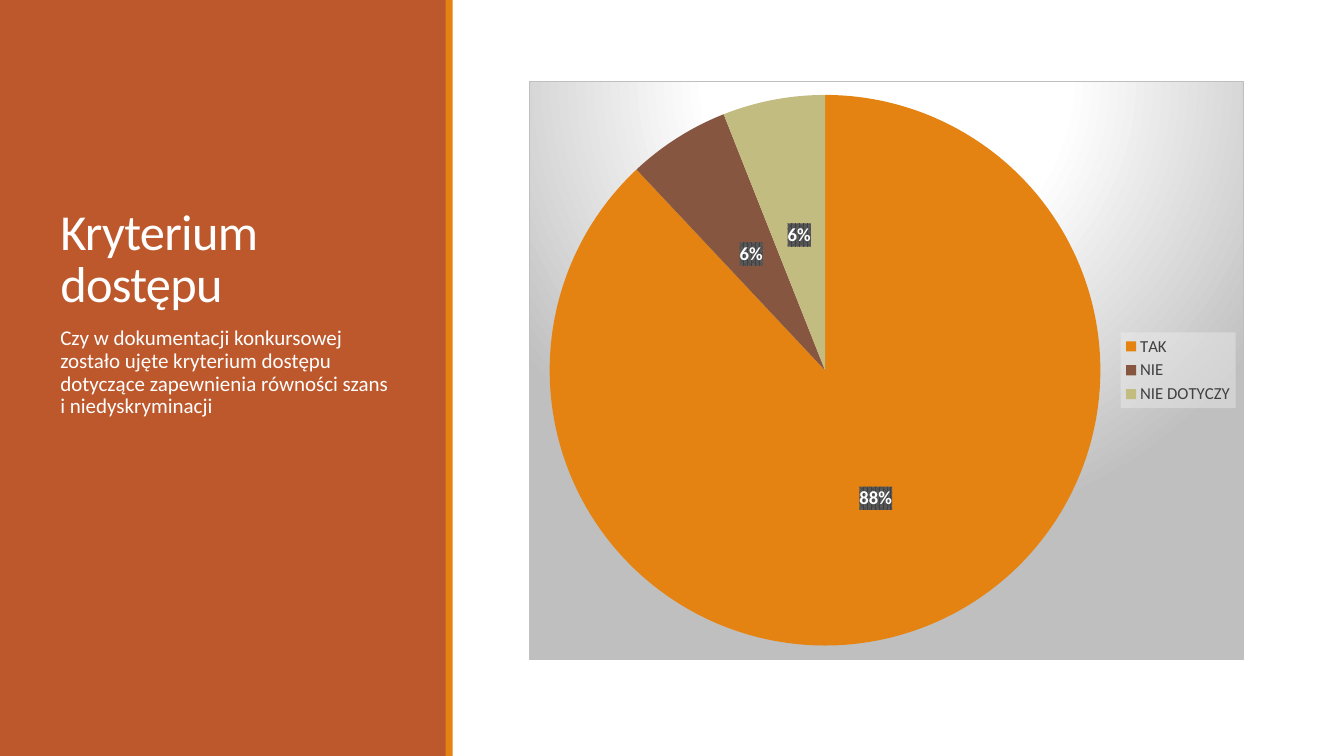
"""Build a slide with a title panel and a pie chart of the access criterion answers."""
from lxml.etree import fromstring
from pptx import Presentation
from pptx.chart.data import CategoryChartData
from pptx.dml.color import RGBColor
from pptx.enum.chart import XL_CHART_TYPE, XL_LABEL_POSITION, XL_LEGEND_POSITION
from pptx.enum.shapes import MSO_SHAPE
from pptx.enum.text import MSO_ANCHOR
from pptx.oxml.ns import nsdecls, qn
from pptx.util import Cm, Pt

THEME = {
    "font": "Calibri",
    "panel": "BD582C", "accent": "E48312", "light": "FFFFFF", "dark": "404040",
    "grey": "BFBFBF", "black": "000000", "legend": "F2F2F2", "stripe": "595959",
    "slices": ["E48312", "865640", "C2BC80"],
    "title": 36, "body": 15, "chart": 10, "legend_size": 12, "label": 13.3,
}

SLIDE = (33.87, 19.05)
PANELS = [
    ("panel", (0, 0, 11.25, SLIDE[1])),
    ("accent", (11.23, 0, 0.18, SLIDE[1])),
]
TEXTS = [
    {"text": "Kryterium dostępu", "size": "title", "box": (1.27, 1.65, 8.89, 6.35),
     "anchor": MSO_ANCHOR.BOTTOM, "spc": -50, "para": {"line_spacing": 0.85}},
    {"text": "Czy w dokumentacji konkursowej zostało ujęte kryterium dostępu "
             "dotyczące zapewnienia równości szans i niedyskryminacji",
     "size": "body", "box": (1.27, 8.13, 8.89, 9.4), "anchor": MSO_ANCHOR.TOP, "spc": 0,
     "para": {"line_spacing": 0.9, "space_before": Pt(12), "space_after": Pt(2)}},
]
ANSWERS = {"TAK": 88, "NIE": 6, "NIE DOTYCZY": 6}
CHART_BOX = (13.33, 2.03, 18.03, 14.6)


def color(name):
    return f'<a:srgbClr val="{THEME[name]}"/>'


CHART_FILL = (
    '<a:gradFill><a:gsLst>'
    f'<a:gs pos="0">{color("light")}</a:gs><a:gs pos="39000">{color("light")}</a:gs>'
    f'<a:gs pos="100000">{color("grey")}</a:gs></a:gsLst>'
    '<a:path path="circle"><a:fillToRect l="50000" t="-80000" r="50000" b="180000"/></a:path>'
    f'</a:gradFill><a:ln w="9525"><a:solidFill>{color("grey")}</a:solidFill></a:ln>')
LEGEND_FILL = (f'<a:solidFill><a:srgbClr val="{THEME["legend"]}"><a:alpha val="39000"/>'
               '</a:srgbClr></a:solidFill>')
LABEL_FILL = (f'<a:pattFill prst="pct75"><a:fgClr>{color("dark")}</a:fgClr>'
              f'<a:bgClr>{color("stripe")}</a:bgClr></a:pattFill>')


def assign(obj, values):
    for name, value in values.items():
        setattr(obj, name, value)


def style_font(font, size, ink, bold=False):
    assign(font, {"name": THEME["font"], "size": Pt(THEME[size]), "bold": bold})
    font.color.rgb = RGBColor.from_string(THEME[ink])


def set_background(parent, fill):
    spPr = fromstring(f'<c:spPr {nsdecls("c", "a")}>{fill}</c:spPr>')
    parent.find(qn("c:txPr")).addprevious(spPr)


def add_panel(s, ink, box):
    sp = s.shapes.add_shape(MSO_SHAPE.RECTANGLE, *map(Cm, box))
    sp.shadow.inherit = False
    sp.fill.solid()
    sp.fill.fore_color.rgb = RGBColor.from_string(THEME[ink])
    sp.line.fill.background()


def add_text(s, item):
    tf = s.shapes.add_textbox(*map(Cm, item["box"])).text_frame
    assign(tf, {"word_wrap": True, "vertical_anchor": item["anchor"]})
    p = tf.paragraphs[0]
    assign(p, item["para"])
    r = p.add_run()
    r.text = item["text"]
    style_font(r.font, item["size"], "light")
    r._r.get_or_add_rPr().set("spc", str(item["spc"]))


def add_pie(s):
    data = CategoryChartData()
    data.categories = list(ANSWERS)
    data.add_series("Odpowiedzi", list(ANSWERS.values()))
    chart = s.shapes.add_chart(XL_CHART_TYPE.PIE, *map(Cm, CHART_BOX), data).chart
    assign(chart, {"has_title": False, "has_legend": True})
    style_font(chart.font, "chart", "black")
    assign(chart.legend, {"position": XL_LEGEND_POSITION.RIGHT, "include_in_layout": False})
    style_font(chart.legend.font, "legend_size", "dark")

    plot = chart.plots[0]
    plot.vary_by_categories = True
    series = plot.series[0]
    for i, ink in enumerate(THEME["slices"]):
        fmt = series.points[i].format
        fmt.fill.solid()
        fmt.fill.fore_color.rgb = RGBColor.from_string(ink)
        fmt.line.fill.background()
    labels = series.data_labels
    assign(labels, {"show_value": False, "show_percentage": True, "number_format": "0%",
                    "number_format_is_linked": False, "position": XL_LABEL_POSITION.CENTER})
    style_font(labels.font, "label", "light", bold=True)

    root = chart.element
    set_background(root, CHART_FILL)
    set_background(next(root.iter(qn("c:legend"))), LEGEND_FILL)
    set_background(next(root.iter(qn("c:dLbls"))), LABEL_FILL)


def main():
    prs = Presentation()
    prs.slide_width, prs.slide_height = map(Cm, SLIDE)
    s = prs.slides.add_slide(prs.slide_layouts[6])
    for ink, box in PANELS:
        add_panel(s, ink, box)
    for item in TEXTS:
        add_text(s, item)
    add_pie(s)
    prs.save("out.pptx")


if __name__ == "__main__":
    main()
